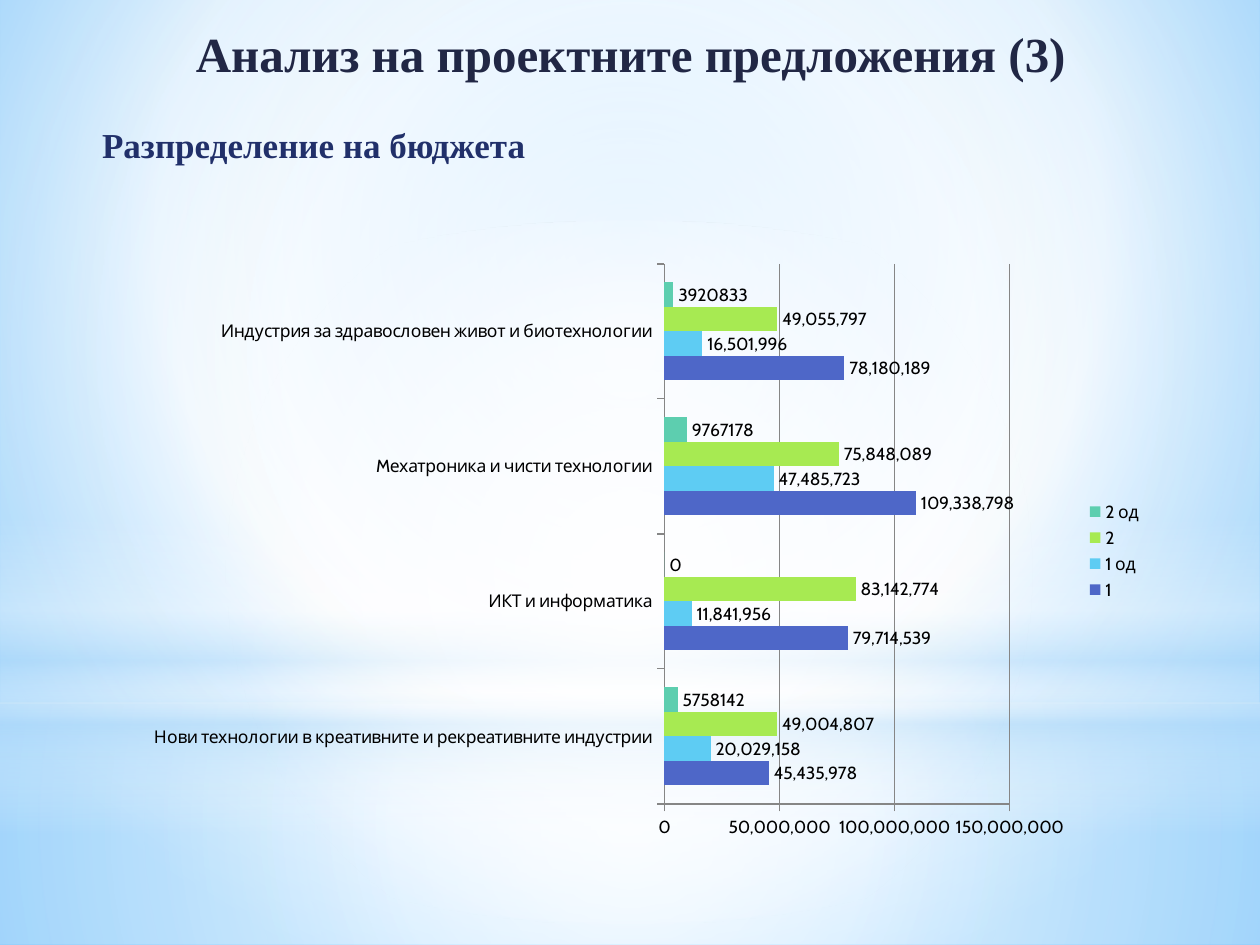
"""Build the slide on budget distribution across project proposals."""
from lxml.etree import SubElement
from pptx import Presentation
from pptx.chart.data import CategoryChartData
from pptx.dml.color import RGBColor
from pptx.enum.chart import XL_CHART_TYPE as ChartType, XL_LEGEND_POSITION as LegendPosition
from pptx.enum.chart import XL_LABEL_POSITION as LabelPosition, XL_TICK_MARK as TickMark
from pptx.enum.shapes import MSO_SHAPE as Shape
from pptx.enum.text import MSO_ANCHOR as Anchor, MSO_AUTO_SIZE as AutoSize, PP_ALIGN as Align
from pptx.oxml import parse_xml
from pptx.oxml.ns import nsdecls, qn
from pptx.util import Inches, Pt

TITLE = "Анализ на проектните предложения (3)"
SUBTITLE = "Разпределение на бюджета"
CATEGORIES = [
    "Нови технологии в креативните и рекреативните индустрии",
    "ИКТ и информатика",
    "Mехатроника и чисти технологии",
    "Индустрия за здравословен живот и биотехнологии",
]
SERIES = [
    ("1", [45435978, 79714539, 109338798, 78180189], "4E67C8", "#,##0"),
    ("1 од", [20029158, 11841956, 47485723, 16501996], "5ECCF3", "#,##0"),
    ("2", [49004807, 83142774, 75848089, 49055797], "A7EA52", "#,##0"),
    ("2 од", [5758142, 0, 9767178, 3920833], "5DCEAF", "General"),
]
THEME = {
    "heading_font": "Times New Roman", "chart_font": "Cabin",
    "title": "212745", "subtitle": "21306A", "chart_text": "000000", "axis": "868686",
    "title_size": 28, "subtitle_size": 20, "chart_size": 10,
}
CENTER = (50, 50, 50, 50)
BACKGROUND = [(0, "9ED5FF", 100), (60, "FFFFFF", 100), (100, "5BB9FF", 100)]
GLOWS = [
    (Shape.RECTANGLE, (0, 5.58, 10, 1.92),
     [(0, "FFFFFF", 91), (37, "FFFFFF", 76), (100, "B4DCFA", 79)], CENTER),
    (Shape.RECTANGLE, (0, 0, 10, 5.58),
     [(0, "FFFFFF", 89), (48, "FFFFFF", 62), (100, "B4DCFA", 79)], CENTER),
    (Shape.RECTANGLE, (0, 4.12, 10, 2.5),
     [(0, "FFFFFF", 0), (29, "FFFFFF", 30), (45, "B4DCFA", 40),
      (55, "FFFFFF", 26), (65, "B4DCFA", 60), (100, "FFFFFF", 0)], None),
    (Shape.OVAL, (0, 1.75, 10, 5.58),
     [(0, "FFFFFF", 100), (56, "FFFFFF", 0)], CENTER),
]


def paint_gradient(fill, owner, stops, focus=None):
    """Fill with a circular gradient around focus, or a vertical one without it."""
    fill.gradient()
    marks = "".join(
        f'<a:gs pos="{place * 1000}"><a:srgbClr val="{color}">'
        f'<a:alpha val="{alpha * 1000}"/></a:srgbClr></a:gs>'
        for place, color, alpha in stops)
    if focus:
        edges = " ".join(f'{side}="{value * 1000}"' for side, value in zip("ltrb", focus))
        shade = f'<a:path path="circle"><a:fillToRect {edges}/></a:path>'
    else:
        shade = '<a:lin ang="5400000" scaled="0"/>'
    old = owner.xpath(".//a:gradFill")[0]
    old.getparent().replace(old, parse_xml(
        f'<a:gradFill {nsdecls("a")} rotWithShape="1"><a:gsLst>{marks}</a:gsLst>{shade}</a:gradFill>'))


def place(box, left, top, width, height):
    """Set the position and size of a box in inches."""
    box.left, box.top, box.width, box.height = map(Inches, (left, top, width, height))


def style_font(font, name, size, color, bold=False):
    """Apply a typeface, size, colour and weight."""
    font.name, font.size, font.bold = name, Pt(size), bold
    font.color.rgb = RGBColor.from_string(color)


def write(box, text, *, size, color, align, anchor):
    """Write one bold heading paragraph and return it."""
    frame = box.text_frame
    frame.word_wrap, frame.auto_size, frame.vertical_anchor = True, AutoSize.NONE, anchor
    para = frame.paragraphs[0]
    para.alignment = align
    span = para.add_run()
    span.text = text
    style_font(span.font, THEME["heading_font"], size, color, bold=True)
    return para


def add_backdrop(page):
    """Paint the background and its translucent glows behind the placeholders."""
    paint_gradient(page.background.fill, page.element, BACKGROUND, (20, 10, 20, 60))
    tree = page.shapes._spTree
    for index, (kind, bounds, stops, focus) in enumerate(GLOWS):
        glow = page.shapes.add_shape(kind, *map(Inches, bounds))
        glow.shadow.inherit = False
        glow.line.fill.background()
        paint_gradient(glow.fill, glow.element, stops, focus)
        tree.insert(2 + index, glow.element)


def add_headings(page):
    """Fill the title and body placeholders."""
    title, body = page.shapes.title, page.placeholders[1]
    place(title, 0.2, 0, 9.61, 0.84)
    write(title, TITLE, size=THEME["title_size"], color=THEME["title"],
          align=Align.CENTER, anchor=Anchor.MIDDLE)
    place(body, 0.51, 0.76, 8.98, 6.61)
    para = write(body, SUBTITLE, size=THEME["subtitle_size"], color=THEME["subtitle"],
                 align=Align.JUSTIFY, anchor=Anchor.TOP)
    body.text_frame.margin_right = 0
    para.line_spacing, para.space_before, para.space_after = 1.5, Pt(0), Pt(3)
    properties = para._p.get_or_add_pPr()
    properties.set("marL", str(Inches(0.2)))
    properties.set("indent", "0")
    SubElement(properties, qn("a:buNone"))


def add_budget_chart(page):
    """Add the clustered bar chart of budgets."""
    data = CategoryChartData()
    data.categories = CATEGORIES
    for name, values, _, number_format in SERIES:
        data.add_series(name, values, number_format)
    bounds = map(Inches, (1.06, 2, 8.11, 4.74))
    chart = page.shapes.add_chart(ChartType.BAR_CLUSTERED, *bounds, data).chart
    style_font(chart.font, THEME["chart_font"], THEME["chart_size"], THEME["chart_text"])
    chart.has_title = False
    chart.has_legend = True
    chart.legend.position = LegendPosition.RIGHT
    chart.legend.include_in_layout = False

    plot = chart.plots[0]
    plot.gap_width, plot.overlap, plot.vary_by_categories = 150, 0, False
    for series, (_, _, color, number_format) in zip(plot.series, SERIES):
        series.format.fill.solid()
        series.format.fill.fore_color.rgb = RGBColor.from_string(color)
        labels = series.data_labels
        labels.show_value, labels.position = True, LabelPosition.OUTSIDE_END
        labels.number_format, labels.number_format_is_linked = number_format, False

    values = chart.value_axis
    values.has_major_gridlines = True
    values.tick_labels.number_format = "#,##0"
    values.tick_labels.number_format_is_linked = False
    for axis in (chart.category_axis, values):
        axis.major_tick_mark, axis.minor_tick_mark = TickMark.OUTSIDE, TickMark.NONE
    for part in (chart.category_axis, values, values.major_gridlines):
        part.format.line.color.rgb = RGBColor.from_string(THEME["axis"])
        part.format.line.width = Pt(0.75)


def main():
    """Assemble and save the deck."""
    deck = Presentation()
    deck.slide_width, deck.slide_height = Inches(10), Inches(7.5)
    page = deck.slides.add_slide(deck.slide_layouts[1])
    add_backdrop(page)
    add_headings(page)
    add_budget_chart(page)
    deck.save("out.pptx")


if __name__ == "__main__":
    main()
